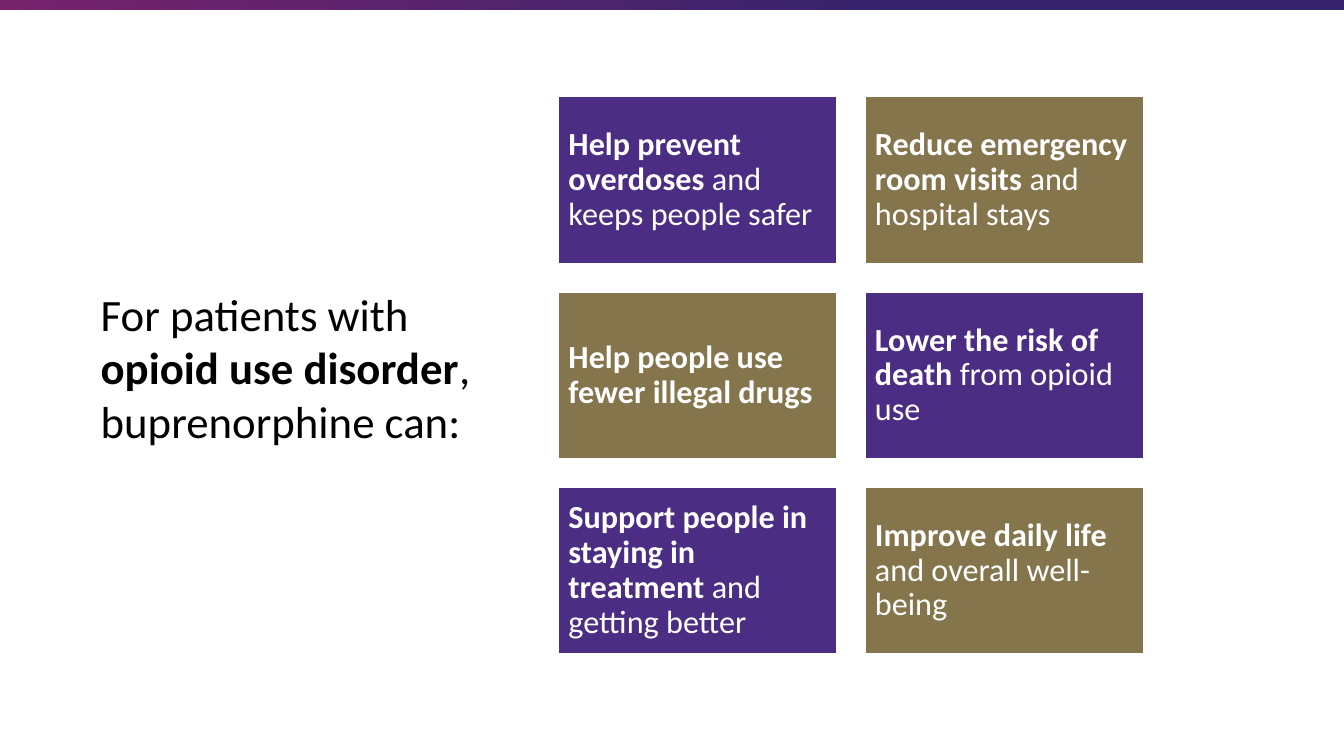
from pptx import Presentation
from pptx.dml.color import RGBColor
from pptx.enum.shapes import MSO_SHAPE
from pptx.enum.text import MSO_ANCHOR, MSO_AUTO_SIZE, PP_ALIGN
from pptx.util import Inches, Pt

COLORS = {
    "plum": "77236C",
    "indigo": "35246C",
    "purple": "4B2D83",
    "gold": "85754D",
    "white": "FFFFFF",
    "black": "000000",
}
FONT = "Calibri"
COLUMNS = 2
INTRO = [("For patients with ", False), ("opioid use disorder", True),
         (", buprenorphine can:", False)]
BENEFITS = [
    ("Help prevent overdoses", " and keeps people safer"),
    ("Reduce emergency room visits", " and hospital stays"),
    ("Help people use fewer illegal drugs", ""),
    ("Lower the risk of death", " from opioid use"),
    ("Support people in staying in treatment", " and getting better"),
    ("Improve daily life", " and overall well-being"),
]


def rgb(name):
    return RGBColor.from_string(COLORS[name])


def add_runs(p, runs, size, color):
    """Add (text, bold) pairs to a paragraph."""
    for text, bold in runs:
        r = p.add_run()
        r.text = text
        r.font.name = FONT
        r.font.size = Pt(size)
        r.font.bold = bold
        r.font.color.rgb = rgb(color)


def add_rect(s, left, top, width, height):
    sp = s.shapes.add_shape(MSO_SHAPE.RECTANGLE, Inches(left), Inches(top),
                            Inches(width), Inches(height))
    sp.shadow.inherit = False
    return sp


def add_top_bar(s, left, top, width, height):
    sp = add_rect(s, left, top, width, height)
    sp.line.fill.background()
    sp.fill.gradient()
    sp.fill.gradient_angle = 0
    stops = zip(sp.fill.gradient_stops, [("plum", 0), ("indigo", 0.67)])
    for stop, (color, position) in stops:
        stop.color.rgb = rgb(color)
        stop.position = position


def add_intro(s, left, top, width, height):
    box = s.shapes.add_textbox(Inches(left), Inches(top), Inches(width), Inches(height))
    tf = box.text_frame
    tf.word_wrap = True
    tf.auto_size = MSO_AUTO_SIZE.SHAPE_TO_FIT_TEXT
    add_runs(tf.paragraphs[0], INTRO, 32, "black")


def add_card(s, left, top, width, height, color, lead, rest):
    sp = add_rect(s, left, top, width, height)
    sp.fill.solid()
    sp.fill.fore_color.rgb = rgb(color)
    sp.line.color.rgb = rgb("white")
    sp.line.width = Pt(1)
    tf = sp.text_frame
    tf.word_wrap = True
    tf.vertical_anchor = MSO_ANCHOR.MIDDLE
    tf.margin_left = tf.margin_right = tf.margin_top = tf.margin_bottom = Inches(0.1)
    p = tf.paragraphs[0]
    p.alignment = PP_ALIGN.LEFT
    p.line_spacing = 0.9
    add_runs(p, [(text, bold) for text, bold in ((lead, True), (rest, False)) if text],
             23, "white")


def add_benefit_grid(s, left, top, width, height, gap=0.28):
    """Fill the box with cards whose colours alternate like a checkerboard."""
    rows = len(BENEFITS) // COLUMNS
    card_w = (width - gap * (COLUMNS - 1)) / COLUMNS
    card_h = (height - gap * (rows - 1)) / rows
    for i, (lead, rest) in enumerate(BENEFITS):
        row, col = divmod(i, COLUMNS)
        color = ("purple", "gold")[(row + col) % 2]
        add_card(s, left + col * (card_w + gap), top + row * (card_h + gap),
                 card_w, card_h, color, lead, rest)


def main():
    prs = Presentation()
    prs.slide_width, prs.slide_height = Inches(13.33), Inches(7.5)
    s = prs.slides.add_slide(prs.slide_layouts[6])
    add_top_bar(s, -0.03, 0, 13.4, 0.1)
    add_intro(s, 0.9, 2.79, 3.91, 1.72)
    add_benefit_grid(s, 5.54, 0.96, 5.8, 5.53)
    prs.save("out.pptx")


if __name__ == "__main__":
    main()
